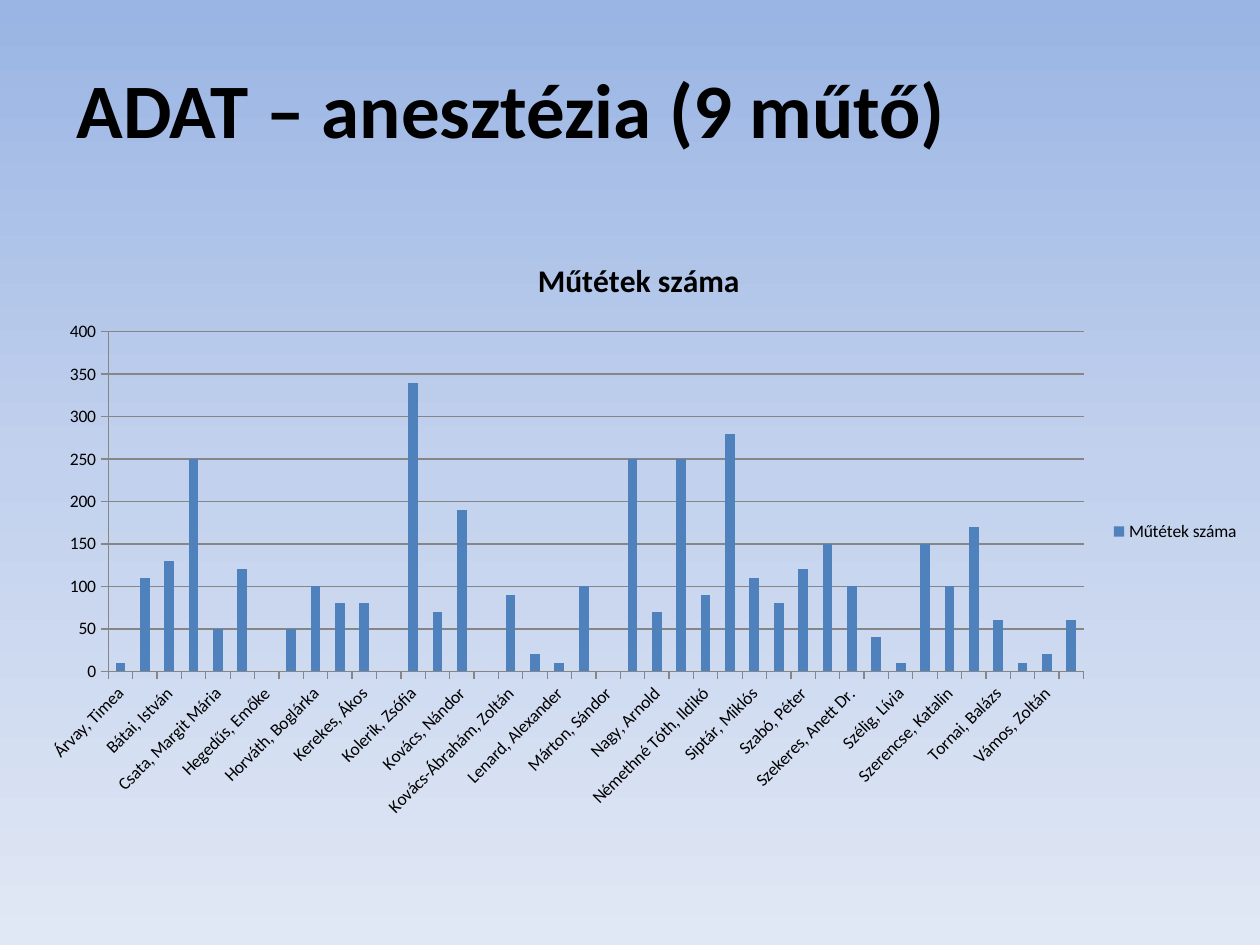
from copy import deepcopy

from pptx import Presentation
from pptx.chart.data import CategoryChartData
from pptx.dml.color import RGBColor
from pptx.enum.chart import XL_CHART_TYPE, XL_LEGEND_POSITION, XL_TICK_MARK
from pptx.util import Inches, Pt

COLUMNS = XL_CHART_TYPE.COLUMN_CLUSTERED
LEGEND_RIGHT = XL_LEGEND_POSITION.RIGHT
TICK_OUT = XL_TICK_MARK.OUTSIDE

THEME = {
    "font": "Calibri",
    "text": RGBColor.from_string("000000"),
    "bar": RGBColor.from_string("4F81BD"),
    "line": RGBColor.from_string("868686"),
    "background": [(0, "9AB5E4"), (0.5, "C2D1ED"), (1, "E1E8F5")],
    "heading_size": 44,
    "chart_title_size": 18,
    "label_size": 10,
}
MEASURE = "Műtétek száma"
OPERATIONS = {
    "Árvay, Timea": 10, "Bartos, Barbara": 110,
    "Bátai, István": 130, "Bogár, Lajos": 250,
    "Csata, Margit Mária": 50, "Csima, Georgina Kinga": 120,
    "Hegedűs, Emőke": 0, "Holczer-Nagy, Zsófia Katalin": 50,
    "Horváth, Boglárka": 100, "Jáksó, Krisztián": 80,
    "Kerekes, Ákos": 80, "Kiss, Tamás": 0,
    "Kolerik, Zsófia": 340, "Komáromi, Gábor": 70,
    "Kovács, Nándor": 190, "Kovács, Patricia": 0,
    "Kovács-Ábrahám, Zoltán": 90, "Kriszta, Zsófia": 20,
    "Lenard, Alexander": 10, "Lima, Nikoletta": 100,
    "Márton, Sándor": 0, "Nádor, Anikó": 250,
    "Nagy, Arnold": 70, "Nagy, Klára": 250,
    "Némethné Tóth, Ildikó": 90, "Rendeki, Szilárd": 280,
    "Siptár, Miklós": 110, "Sütő, Balázs": 80,
    "Szabó, Péter": 120, "Szabó, Zoltán": 150,
    "Szekeres, Anett Dr.": 100, "Szekrényes, Orsolya": 40,
    "Szélig, Lívia": 10, "Szendrei, Boglárka": 150,
    "Szerencse, Katalin": 100, "Tánczos, Andrea": 170,
    "Tornai, Balázs": 60, "Tóth, Krisztina": 10,
    "Vámos, Zoltán": 20, "Weiling, Zsolt": 60,
}


def write(frame, text, size, bold=False):
    """Put one formatted line of text into a text frame."""
    run = frame.paragraphs[0].add_run()
    run.text = text
    run.font.name = THEME["font"]
    run.font.size = Pt(size)
    run.font.bold = bold
    run.font.color.rgb = THEME["text"]


deck = Presentation()
deck.slide_width, deck.slide_height = Inches(10), Inches(7.5)
W, H = deck.slide_width, deck.slide_height
slide = deck.slides.add_slide(deck.slide_layouts[6])

# Background: three-stop gradient from top to bottom
backdrop = slide.background.fill
backdrop.gradient()
backdrop.gradient_angle = 270
stops = slide.element.xpath(".//p:bg//a:gsLst")[0]
stops.append(deepcopy(stops[-1]))
for stop, (position, color) in zip(backdrop.gradient_stops, THEME["background"]):
    stop.position = position
    stop.color.rgb = RGBColor.from_string(color)

# Heading
heading = slide.shapes.add_textbox(
    int(W * 0.051), int(H * 0.059), int(W * 0.756), int(H * 0.112))
heading.text_frame.word_wrap = True
write(heading.text_frame, "ADAT – anesztézia (9 műtő)",
      THEME["heading_size"], bold=True)

# Operations per anaesthetist
data = CategoryChartData()
data.categories = list(OPERATIONS)
data.add_series(MEASURE, list(OPERATIONS.values()))
chart = slide.shapes.add_chart(
    COLUMNS, int(W * 0.02), int(H * 0.248), int(W * 0.974), int(H * 0.629),
    data).chart
chart.font.name = THEME["font"]
chart.font.size = Pt(THEME["label_size"])
chart.font.color.rgb = THEME["text"]
chart.has_title = True
write(chart.chart_title.text_frame, MEASURE,
      THEME["chart_title_size"], bold=True)

# Bars
plot = chart.plots[0]
plot.gap_width = 150
plot.vary_by_categories = False
bars = plot.series[0].format.fill
bars.solid()
bars.fore_color.rgb = THEME["bar"]

# Axes, gridlines and legend
names, counts = chart.category_axis, chart.value_axis
counts.minimum_scale, counts.maximum_scale, counts.major_unit = 0, 400, 50
counts.has_major_gridlines = True
for axis in (names, counts):
    axis.major_tick_mark = TICK_OUT
for ruled in (names, counts, counts.major_gridlines):
    ruled.format.line.color.rgb = THEME["line"]
    ruled.format.line.width = Pt(0.75)
chart.has_legend = True
chart.legend.position = LEGEND_RIGHT
chart.legend.include_in_layout = False

deck.save("out.pptx")
